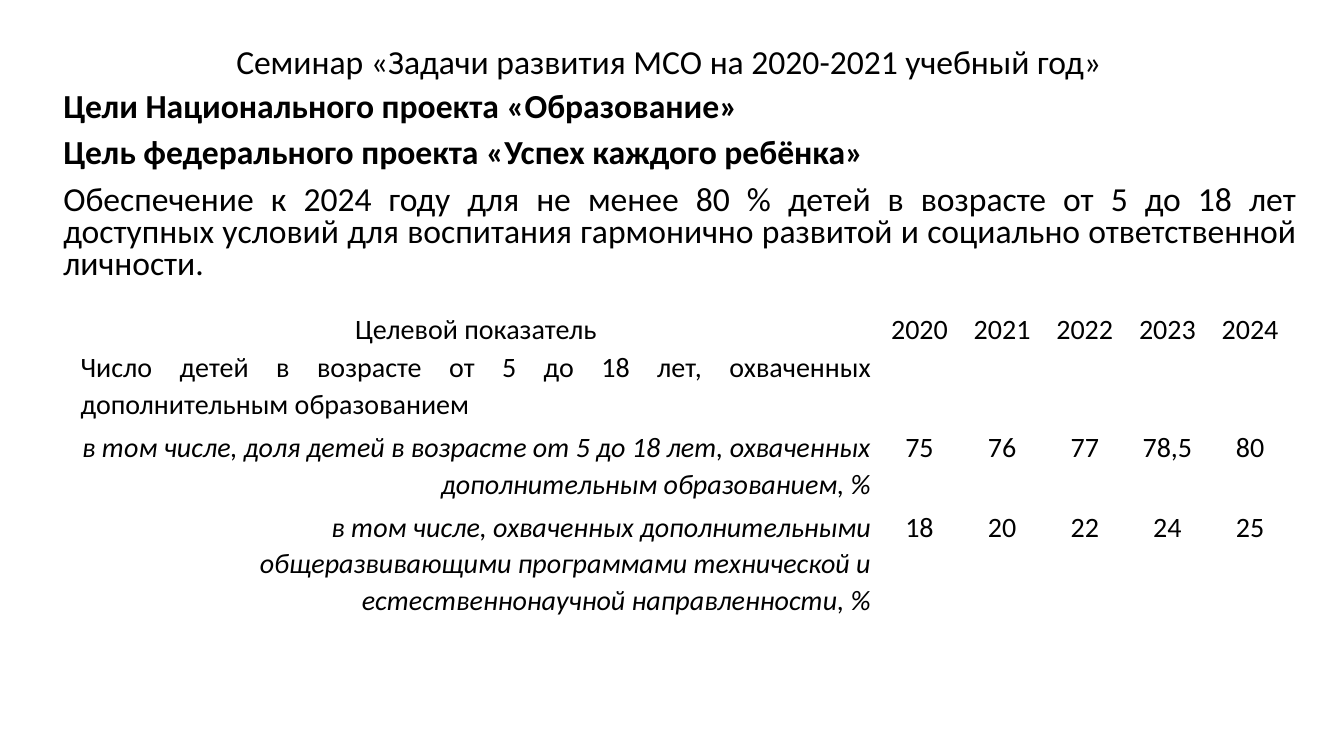
"""Build the seminar slide on the goals of the national project «Образование»."""
from lxml import etree
from pptx import Presentation
from pptx.dml.color import RGBColor
from pptx.enum.text import MSO_ANCHOR, PP_ALIGN
from pptx.oxml import parse_xml
from pptx.util import Inches, Pt

BLACK = RGBColor(0x00, 0x00, 0x00)
WHITE = RGBColor(0xFF, 0xFF, 0xFF)
CENTER, JUSTIFY, RIGHT = PP_ALIGN.CENTER, PP_ALIGN.JUSTIFY, PP_ALIGN.RIGHT
TOP = MSO_ANCHOR.TOP
DRAWING_NS = "http://schemas.openxmlformats.org/drawingml/2006/main"


def write(paragraph, text, size=24, align=JUSTIFY, spacing=0.8, before=0, after=0,
          bold=False, italic=False):
    paragraph.alignment = align
    paragraph.line_spacing = spacing
    paragraph.space_before = Pt(before)
    paragraph.space_after = Pt(after)
    run = paragraph.add_run()
    run.text = text
    run.font.name = "Calibri"
    run.font.size = Pt(size)
    run.font.bold = bold
    run.font.italic = italic
    run.font.color.rgb = BLACK


def add_border(cell, side, width):
    line = parse_xml(f'<a:{side} xmlns:a="{DRAWING_NS}" w="{Pt(width)}"/>')
    fill = etree.SubElement(line, f"{{{DRAWING_NS}}}solidFill")
    etree.SubElement(fill, f"{{{DRAWING_NS}}}srgbClr", val=str(WHITE))
    cell._tc.get_or_add_tcPr().append(line)


presentation = Presentation()
presentation.slide_width = Inches(13.33)
presentation.slide_height = Inches(7.5)
slide = presentation.slides.add_slide(presentation.slide_layouts[5])
slide.background.fill.solid()
slide.background.fill.fore_color.rgb = WHITE

seminar = slide.shapes.title
seminar.left, seminar.top = Inches(0.53), Inches(0.4)
seminar.width, seminar.height = Inches(12.21), Inches(0.47)
seminar.text_frame.vertical_anchor = TOP
seminar.text_frame.word_wrap = True
write(seminar.text_frame.paragraphs[0],
      "Семинар «Задачи развития МСО на 2020-2021 учебный год»",
      align=CENTER, spacing=0.9)

goals = slide.shapes.add_textbox(
    Inches(0.53), Inches(0.87), Inches(12.43), Inches(2.38)).text_frame
goals.word_wrap = True
goals.vertical_anchor = TOP
write(goals.paragraphs[0], "Цели Национального проекта «Образование»", bold=True)
write(goals.add_paragraph(), "Цель федерального проекта «Успех каждого ребёнка»",
      before=10, bold=True)
write(goals.add_paragraph(),
      "Обеспечение к 2024 году для не менее 80 % детей в возрасте от 5 до 18 лет "
      "доступных условий для воспитания гармонично развитой и социально "
      "ответственной личности.", before=10)

indicators = [
    ("Целевой показатель", CENTER, False, ["2020", "2021", "2022", "2023", "2024"]),
    ("Число детей в возрасте от 5 до 18 лет, охваченных дополнительным образованием",
     JUSTIFY, False, [""] * 5),
    ("в том числе, доля детей в возрасте от 5 до 18 лет, охваченных дополнительным "
     "образованием, %", RIGHT, True, ["75", "76", "77", "78,5", "80"]),
    ("в том числе, охваченных дополнительными общеразвивающими программами "
     "технической и естественнонаучной направленности, %",
     RIGHT, True, ["18", "20", "22", "24", "25"]),
]
row_heights = [0.38, 0.79, 0.79, 1.05]
column_widths = [7.98] + [0.82] * 5

targets = slide.shapes.add_table(
    len(row_heights), len(column_widths), Inches(0.73), Inches(3.08),
    Inches(sum(column_widths)), Inches(sum(row_heights))).table
for column, width in zip(targets.columns, column_widths):
    column.width = Inches(width)
for row, height in zip(targets.rows, row_heights):
    row.height = Inches(height)

for row_index, (indicator, align, italic, values) in enumerate(indicators):
    for column_index, text in enumerate([indicator] + values):
        cell = targets.cell(row_index, column_index)
        cell.margin_left = cell.margin_right = Inches(0.07)
        cell.margin_top = cell.margin_bottom = 0
        cell.vertical_anchor = TOP
        for side in ("lnL", "lnR", "lnT", "lnB"):
            under_header = (row_index, side) in ((0, "lnB"), (1, "lnT"))
            add_border(cell, side, 3 if under_header else 1)
        cell.fill.background()
        if text:
            is_indicator = column_index == 0
            write(cell.text_frame.paragraphs[0], text, size=20,
                  align=align if is_indicator else CENTER, spacing=1.07, after=8,
                  italic=italic and is_indicator)

presentation.save("out.pptx")
